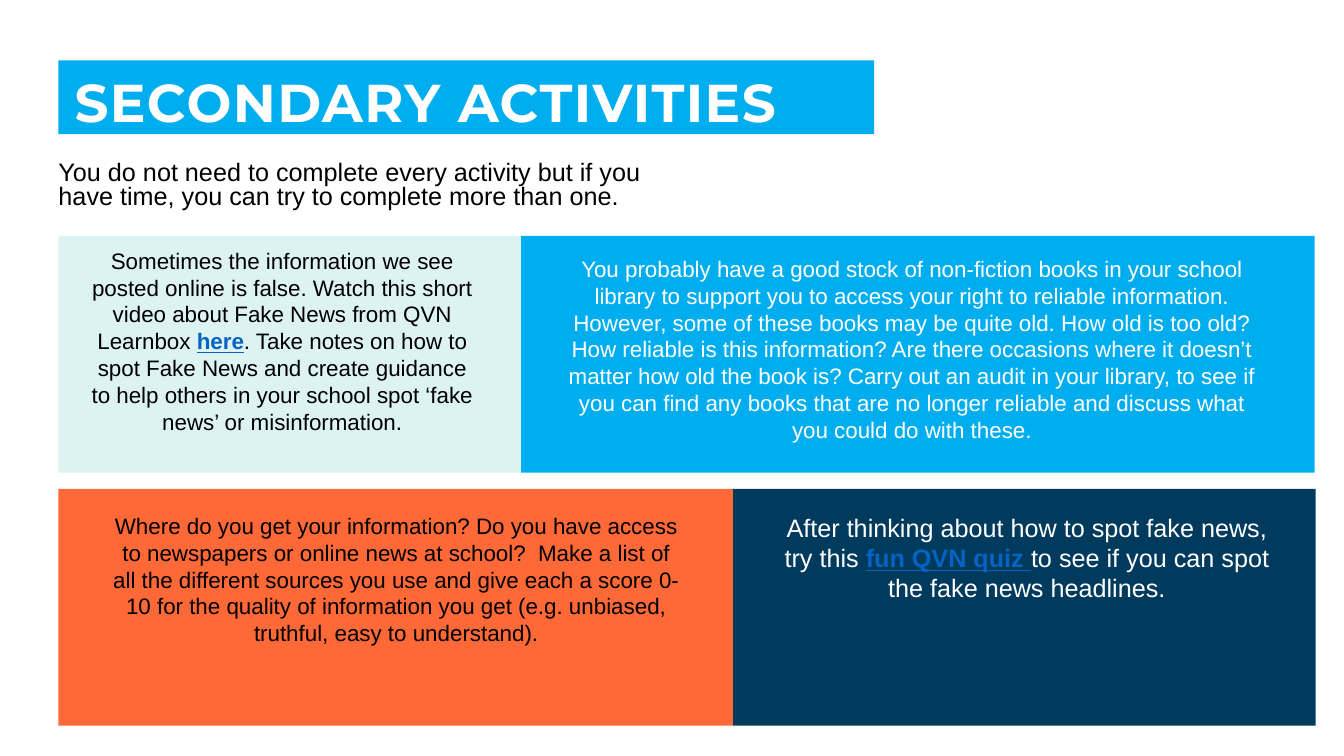
from dataclasses import dataclass
from typing import Any

from lxml.etree import SubElement
from pptx import Presentation
from pptx.dml.color import RGBColor
from pptx.enum.shapes import MSO_SHAPE as Preset
from pptx.enum.text import MSO_ANCHOR as Anchor, MSO_AUTO_SIZE as AutoSize, PP_ALIGN as Align
from pptx.oxml.ns import qn
from pptx.util import Emu, Pt

EMU_PER_PX = 9144
PANEL_HEIGHT = 235
TOP_ROW, BOTTOM_ROW = 234, 485

WHITE = RGBColor(0xFF, 0xFF, 0xFF)
BLACK = RGBColor(0x00, 0x00, 0x00)
SKY = RGBColor(0x00, 0xAE, 0xEF)
MINT = RGBColor(0xDD, 0xF3, 0xF1)
ORANGE = RGBColor(0xFF, 0x69, 0x37)
NAVY = RGBColor(0x00, 0x3B, 0x5E)
LINK = RGBColor(0x05, 0x63, 0xC1)


@dataclass(frozen=True)
class Box:
    left: int
    top: int
    width: int
    height: int

    def emu(self) -> list[Emu]:
        return [Emu(side * EMU_PER_PX) for side in (self.left, self.top, self.width, self.height)]


@dataclass(frozen=True)
class Activity:
    panel: Box
    fill: RGBColor
    text_box: Box
    size: int
    color: RGBColor
    before: str
    link: str = ""
    after: str = ""


ACTIVITIES = [
    Activity(
        Box(58, TOP_ROW, 459, PANEL_HEIGHT), MINT, Box(77, 240, 406, 199), 16, BLACK,
        "Sometimes the information we see posted online is false. Watch this short video "
        "about Fake News from QVN Learnbox ",
        "here",
        ". Take notes on how to spot Fake News and create guidance to help others in your "
        "school spot ‘fake news’ or misinformation.",
    ),
    Activity(
        Box(58, BOTTOM_ROW, 669, PANEL_HEIGHT), ORANGE, Box(99, 503, 588, 145), 16, BLACK,
        "Where do you get your information? Do you have access to newspapers or online news "
        "at school?  Make a list of all the different sources you use and give each a score "
        "0-10 for the quality of information you get (e.g. unbiased, truthful, easy to "
        "understand).",
    ),
    Activity(
        Box(517, TOP_ROW, 787, PANEL_HEIGHT), SKY, Box(553, 248, 703, 199), 16, WHITE,
        "You probably have a good stock of non-fiction books in your school library to "
        "support you to access your right to reliable information. However, some of these "
        "books may be quite old. How old is too old? How reliable is this information? Are "
        "there occasions where it doesn’t matter how old the book is? Carry out an audit in "
        "your library, to see if you can find any books that are no longer reliable and "
        "discuss what you could do with these.",
    ),
    Activity(
        Box(727, BOTTOM_ROW, 578, PANEL_HEIGHT), NAVY, Box(757, 503, 523, 101), 18, WHITE,
        "After thinking about how to spot fake news, try this ",
        "fun QVN quiz ",
        "to see if you can spot the fake news headlines.",
    ),
]


def set_all(target: Any, formats: dict[str, Any]) -> None:
    for name, value in formats.items():
        setattr(target, name, value)


def place(shape: Any, box: Box) -> None:
    set_all(shape, dict(zip(("left", "top", "width", "height"), box.emu())))


def set_frame(frame: Any, insets: tuple[int, int, int, int], anchor: Any) -> None:
    sides = ("margin_left", "margin_top", "margin_right", "margin_bottom")
    set_all(frame, dict(zip(sides, (Emu(inset * EMU_PER_PX) for inset in insets))))
    set_all(frame, {"word_wrap": True, "auto_size": AutoSize.NONE, "vertical_anchor": anchor})


def add_run(paragraph: Any, text: str, color: RGBColor, formats: dict[str, Any]) -> Any:
    run = paragraph.add_run()
    run.text = text
    set_all(run.font, formats)
    run.font.color.rgb = color
    return run


def fill_heading(shape: Any) -> None:
    place(shape, Box(58, 60, 809, 73))
    shape.fill.solid()
    shape.fill.fore_color.rgb = SKY
    set_frame(shape.text_frame, (16, 16, 12, 0), Anchor.MIDDLE)
    paragraph = shape.text_frame.paragraphs[0]
    set_all(paragraph, {"alignment": Align.LEFT, "line_spacing": 0.9, "space_before": Pt(0)})
    formats = {"name": "Montserrat", "size": Pt(38), "bold": True}
    run = add_run(paragraph, "SECONDARY ACTIVITIES", WHITE, formats)
    run._r.get_or_add_rPr().set("spc", "100")


def fill_intro(shape: Any) -> None:
    place(shape, Box(58, 156, 621, 62))
    set_frame(shape.text_frame, (0, 5, 10, 5), Anchor.TOP)
    paragraph = shape.text_frame.paragraphs[0]
    set_all(paragraph, {"alignment": Align.LEFT, "line_spacing": 0.8, "space_before": Pt(0)})
    properties = paragraph._p.get_or_add_pPr()
    properties.set("marL", "0")
    properties.set("indent", "0")
    SubElement(properties, qn("a:buNone"))
    text = (
        "You do not need to complete every activity but if you have time, "
        "you can try to complete more than one."
    )
    add_run(paragraph, text, BLACK, {"name": "Arial", "size": Pt(18)})


def add_panel(slide: Any, activity: Activity) -> None:
    shape = slide.shapes.add_shape(Preset.RECTANGLE, *activity.panel.emu())
    shape.shadow.inherit = False
    shape.fill.solid()
    shape.fill.fore_color.rgb = activity.fill
    shape.line.fill.background()


def add_activity_text(slide: Any, activity: Activity) -> None:
    shape = slide.shapes.add_textbox(*activity.text_box.emu())
    set_frame(shape.text_frame, (10, 5, 10, 5), Anchor.TOP)
    paragraph = shape.text_frame.paragraphs[0]
    paragraph.alignment = Align.CENTER
    plain = {"name": "Arial", "size": Pt(activity.size)}
    add_run(paragraph, activity.before, activity.color, plain)
    if activity.link:
        add_run(paragraph, activity.link, LINK, plain | {"bold": True, "underline": True})
        add_run(paragraph, activity.after, activity.color, plain)


def main() -> None:
    presentation = Presentation()
    set_all(presentation, {
        "slide_width": Emu(1333 * EMU_PER_PX),
        "slide_height": Emu(750 * EMU_PER_PX),
    })
    slide = presentation.slides.add_slide(presentation.slide_layouts[1])
    fill_heading(slide.shapes.title)
    fill_intro(slide.placeholders[1])
    for activity in ACTIVITIES:
        add_panel(slide, activity)
    for activity in ACTIVITIES:
        add_activity_text(slide, activity)
    presentation.save("out.pptx")


if __name__ == "__main__":
    main()
